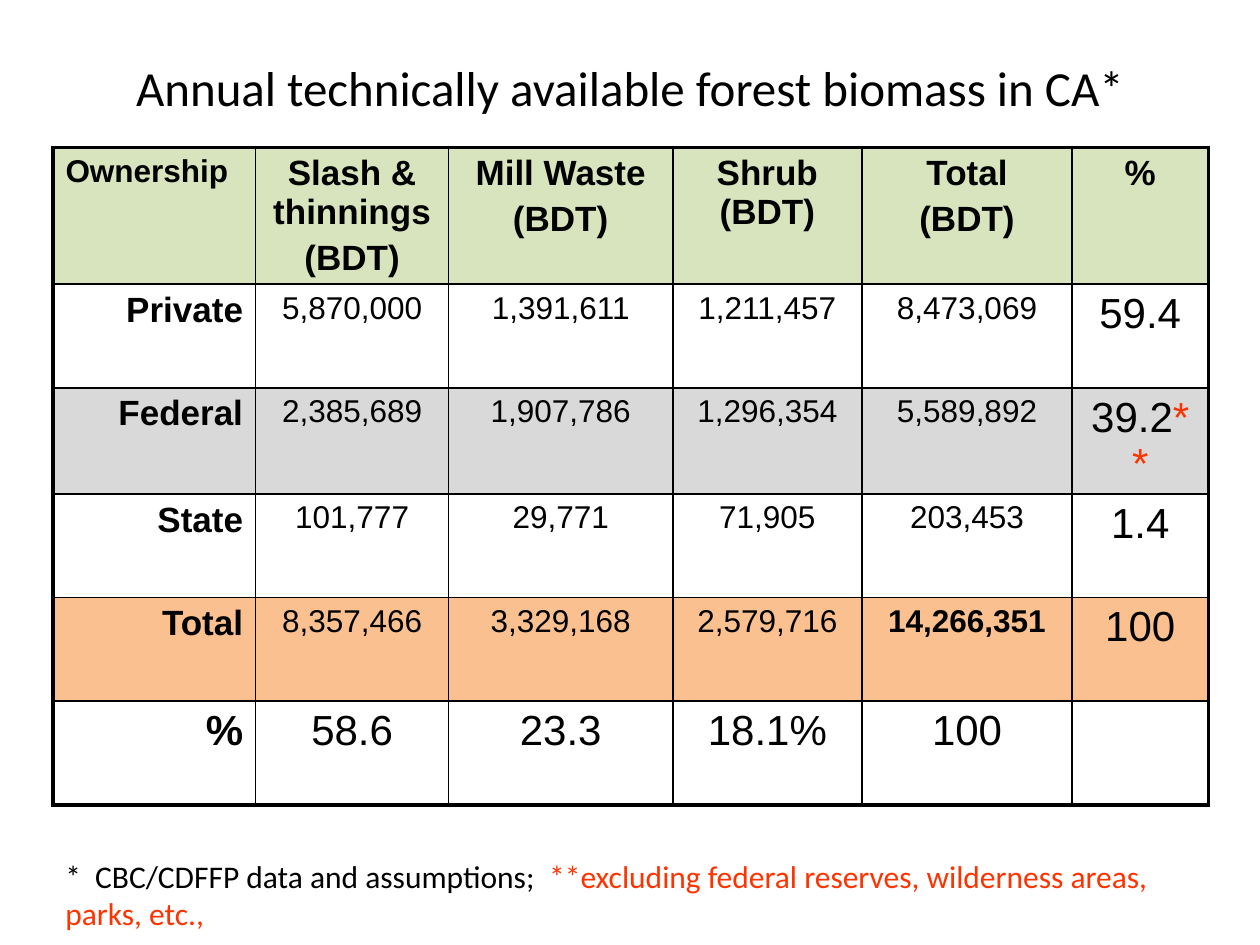
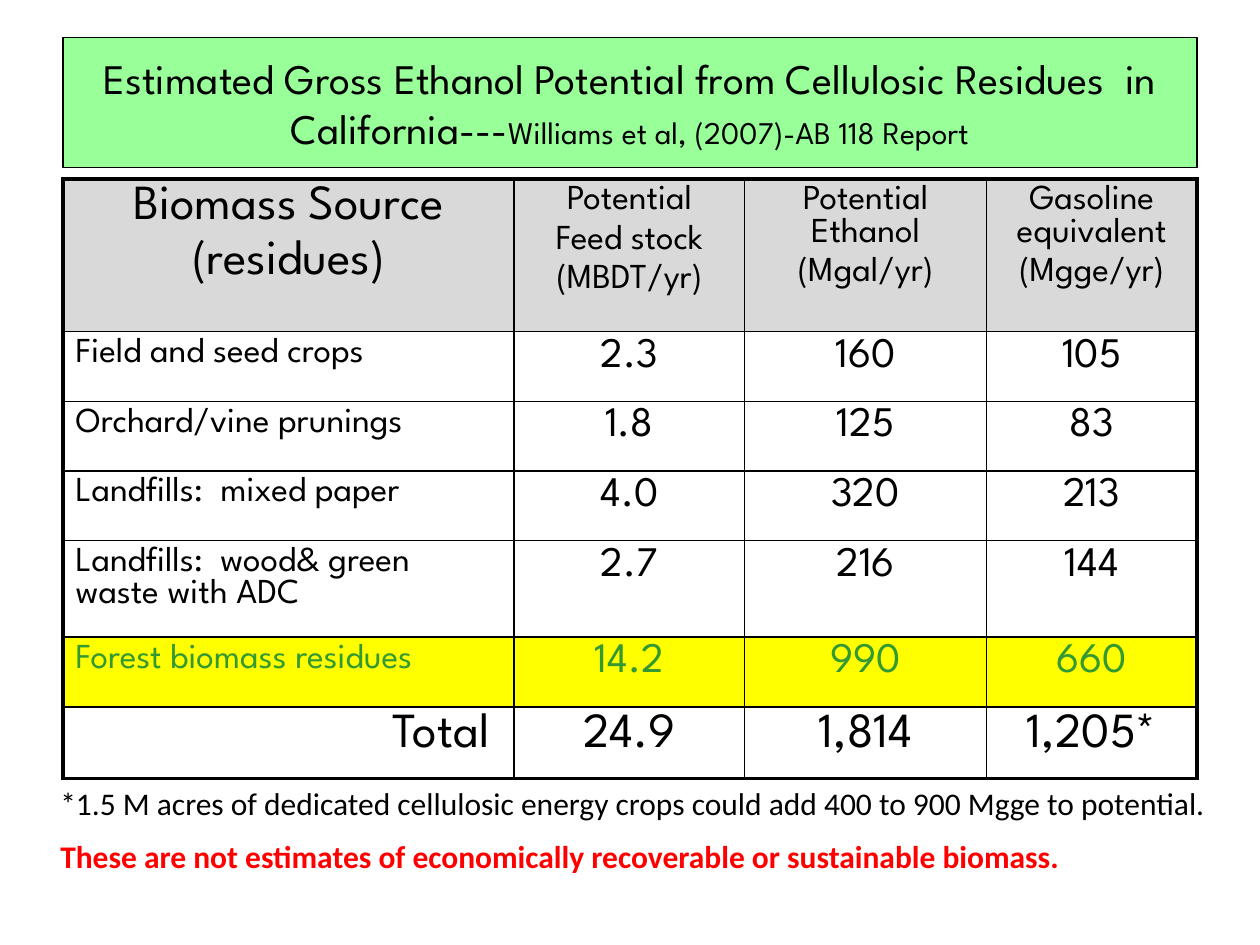
from collections import namedtuple

from lxml import etree
from pptx import Presentation
from pptx.dml.color import RGBColor
from pptx.enum.shapes import MSO_SHAPE
from pptx.enum.text import MSO_ANCHOR, PP_ALIGN
from pptx.oxml.ns import qn
from pptx.util import Pt

RECT = MSO_SHAPE.RECTANGLE
MIDDLE = MSO_ANCHOR.MIDDLE
LEFT, CENTER, RIGHT = PP_ALIGN.LEFT, PP_ALIGN.CENTER, PP_ALIGN.RIGHT

BLACK = RGBColor(0x00, 0x00, 0x00)
WHITE = RGBColor(0xFF, 0xFF, 0xFF)
GREY = RGBColor(0xD9, 0xD9, 0xD9)
SAGE = RGBColor(0xD7, 0xE4, 0xBD)
PEACH = RGBColor(0xFA, 0xC0, 0x90)
MINT = RGBColor(0x99, 0xFF, 0x99)
YELLOW = RGBColor(0xFF, 0xFF, 0x00)
GREEN = RGBColor(0x33, 0x99, 0x33)
ORANGE = RGBColor(0xFF, 0x33, 0x00)
RED = RGBColor(0xFF, 0x00, 0x00)

SANS, BODY, ROUND = "Arial", "Calibri", "League Spartan"
THIN, THICK = Pt(1), Pt(2.25)
CELL_GAP, NOTE_GAP = 0.2, 0.5

Span = namedtuple("Span", "text size color bold", defaults=(BLACK, False))
Look = namedtuple("Look", "size align color bold", defaults=(CENTER, BLACK, False))


def write(frame, paras, font, align=LEFT, gap=0):
    """Fill a text frame; gap is the space between paragraphs in font sizes."""
    frame.clear()
    frame.word_wrap = True
    for i, spans in enumerate(paras):
        para = frame.add_paragraph() if i else frame.paragraphs[0]
        para.alignment = align
        para.space_before = Pt(gap * spans[0].size if i else 0)
        for span in spans:
            run = para.add_run()
            run.text = span.text
            run.font.name = font
            run.font.size = Pt(span.size)
            run.font.bold = span.bold
            run.font.color.rgb = span.color


def add_title(slide, box, spans, font, fill=None):
    shape = slide.shapes.add_shape(RECT, *map(Pt, box))
    shape.shadow.inherit = False
    if fill is None:
        shape.fill.background()
        shape.line.fill.background()
    else:
        shape.fill.solid()
        shape.fill.fore_color.rgb = fill
        shape.line.color.rgb = BLACK
        shape.line.width = Pt(0.75)
    shape.text_frame.vertical_anchor = MIDDLE
    write(shape.text_frame, [spans], font, CENTER)


def add_note(slide, box, paras):
    note = slide.shapes.add_textbox(*map(Pt, box))
    write(note.text_frame, paras, BODY, gap=NOTE_GAP)


def set_edges(cell, widths):
    """Draw the left, right, top and bottom borders of a cell."""
    props = cell._tc.get_or_add_tcPr()
    for i, (side, width) in enumerate(zip("LRTB", widths)):
        line = etree.Element(qn(f"a:ln{side}"), w=str(int(width)))
        fill = etree.SubElement(line, qn("a:solidFill"))
        etree.SubElement(fill, qn("a:srgbClr"), val=str(BLACK))
        props.insert(i, line)


def add_grid(slide, spot, cols, rows, data, fills, font, look):
    """Add a table; look(row, col) tells how the text of a cell is set."""
    size = sum(cols), sum(rows)
    table = slide.shapes.add_table(
        len(rows), len(cols), *map(Pt, (*spot, *size))).table
    table.first_row = table.horz_banding = False
    for col, width in zip(table.columns, cols):
        col.width = Pt(width)
    last_row, last_col = len(rows) - 1, len(cols) - 1
    for r, (height, texts, fill) in enumerate(zip(rows, data, fills)):
        table.rows[r].height = Pt(height)
        for c, text in enumerate(texts):
            cell = table.cell(r, c)
            if fill is None:
                cell.fill.background()
            else:
                cell.fill.solid()
                cell.fill.fore_color.rgb = fill
            outer = c == 0, c == last_col, r == 0, r == last_row
            set_edges(cell, [THICK if edge else THIN for edge in outer])
            if text:
                style = look(r, c)
                paras = [[Span(line, style.size, style.color, style.bold)]
                         for line in text.split("\n")]
                write(cell.text_frame, paras, font, style.align, CELL_GAP)
    return table


OWNERS = [
    ["Ownership", "Slash & thinnings\n(BDT)", "Mill Waste\n(BDT)",
     "Shrub (BDT)", "Total\n(BDT)", "%"],
    ["Private", "5,870,000", "1,391,611", "1,211,457", "8,473,069", "59.4"],
    ["Federal", "2,385,689", "1,907,786", "1,296,354", "5,589,892", "39.2"],
    ["State", "101,777", "29,771", "71,905", "203,453", "1.4"],
    ["Total", "8,357,466", "3,329,168", "2,579,716", "14,266,351", "100"],
    ["%", "58.6", "23.3", "18.1%", "100", ""],
]


def owner_look(r, c):
    if r == 0:
        return Look(20 if c else 18, CENTER if c else LEFT, bold=True)
    if c == 0:
        return Look(24 if r == 5 else 20, RIGHT, bold=True)
    if r == 5 or c == 5:
        return Look(24)
    return Look(18, bold=(r, c) == (4, 4))


def forest_slide(slide):
    add_title(slide, (36, 21.6, 648, 56.2),
              [Span("Annual technically available forest biomass in CA*", 28)],
              BODY)
    table = add_grid(slide, (30.24, 84.24),
                     [115.9, 110.2, 128.2, 108, 120.2, 77.8], [59.2] * 6, OWNERS,
                     [SAGE, WHITE, GREY, WHITE, PEACH, WHITE], SANS, owner_look)
    write(table.cell(2, 5).text_frame,
          [[Span("39.2", 24), Span("**", 24, ORANGE)]], SANS, CENTER)
    add_note(slide, (30.24, 486, 671.8, 50.4), [[
        Span("*  CBC/CDFFP data and assumptions;  ", 18),
        Span("**excluding federal reserves, wilderness areas, parks, etc.,",
             18, ORANGE)]])


SOURCES = [
    ["Biomass Source\n(residues)", "Potential\nFeed stock\n(MBDT/yr)",
     "Potential Ethanol\n(Mgal/yr)", "Gasoline equivalent\n(Mgge/yr)"],
    ["Field and seed crops", "2.3", "160", "105"],
    ["Orchard/vine prunings", "1.8", "125", "83"],
    ["Landfills:  mixed paper", "4.0", "320", "213"],
    ["Landfills:  wood& green waste with ADC", "2.7", "216", "144"],
    ["Forest biomass residues", "14.2", "990", "660"],
    ["Total ", "24.9", "1,814", "1,205*"],
]


def source_look(r, c):
    if r == 0:
        return Look(20 if c else 28)
    if r == 6:
        return Look(28, CENTER if c else RIGHT)
    color = GREEN if r == 5 else BLACK
    return Look(24, CENTER, color) if c else Look(20, LEFT, color)


def fuel_slide(slide):
    add_title(slide, (36, 21.6, 648, 74.2), [
        Span("Estimated Gross Ethanol Potential from Cellulosic Residues  in "
             "California---", 24),
        Span("Williams et al, (2007)-AB 118 Report", 18)], ROUND, MINT)
    add_grid(slide, (36, 102.24), [257.8, 131.8, 138.2, 120.2],
             [51.1, 39.8, 39.8, 39.8, 47.5, 39.8, 39.8], SOURCES,
             [GREY, None, None, None, None, YELLOW, None], ROUND, source_look)
    add_note(slide, (27.36, 444.24, 692.6, 61.9), [
        [Span("*1.5 M acres of dedicated cellulosic energy crops could add "
              "400 to 900 Mgge to potential.", 18)],
        [Span("These are not estimates of economically recoverable or "
              "sustainable biomass.", 18, RED, True)]])


def main():
    deck = Presentation()
    deck.slide_width, deck.slide_height = Pt(720), Pt(540)
    blank = deck.slide_layouts[6]
    for build in (forest_slide, fuel_slide):
        build(deck.slides.add_slide(blank))
    deck.save("out.pptx")


if __name__ == "__main__":
    main()
